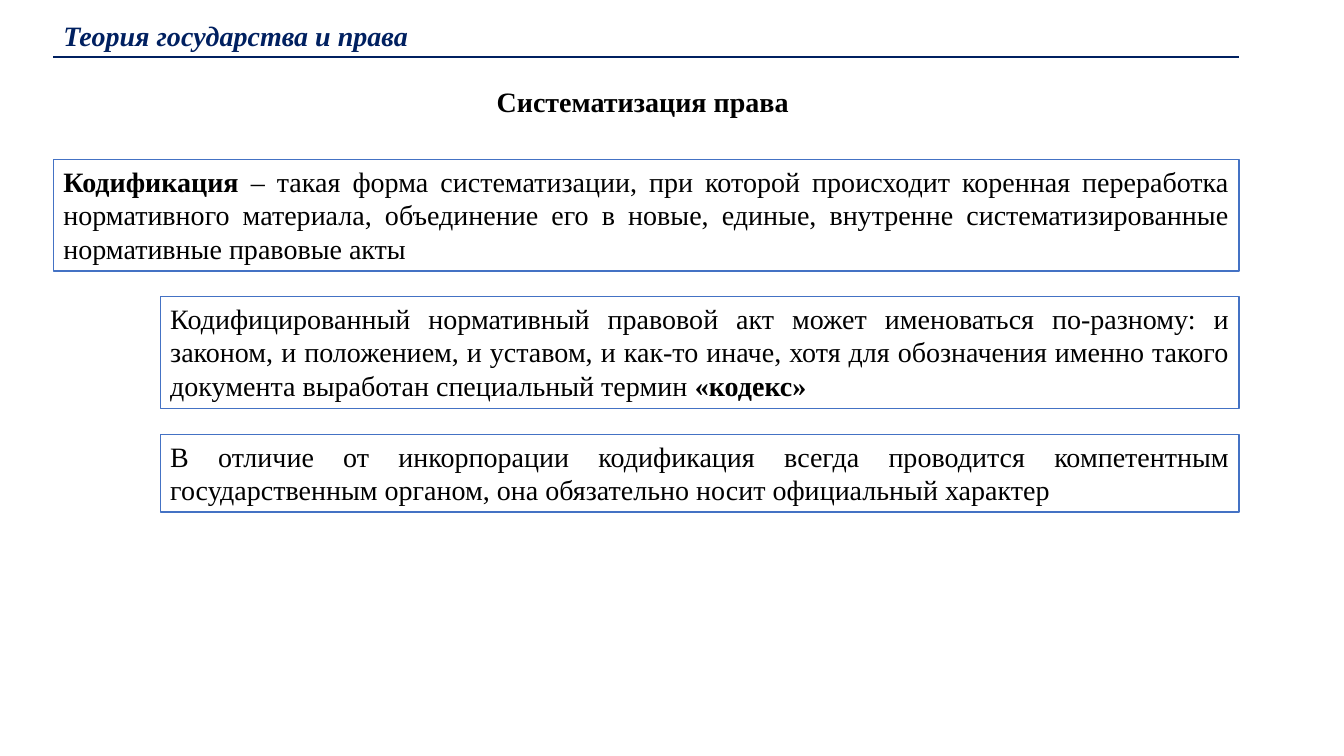
from lxml import etree
from pptx import Presentation
from pptx.dml.color import RGBColor
from pptx.enum import shapes, text
from pptx.oxml.ns import qn
from pptx.util import Inches, Pt

NAVY = RGBColor(0x00, 0x20, 0x60)
BLUE = RGBColor(0x44, 0x72, 0xC4)
BLACK = RGBColor(0, 0, 0)
WHITE = RGBColor(255, 255, 255)
LEFT, INDENT, RIGHT = 0.53, 1.59, 12.29


def write(frame, runs, align, color=BLACK, italic=False, wrap=True):
    layout = {
        "word_wrap": wrap,
        "auto_size": text.MSO_AUTO_SIZE.SHAPE_TO_FIT_TEXT,
        "vertical_anchor": text.MSO_ANCHOR.TOP,
    }
    for name, value in layout.items():
        setattr(frame, name, value)
    paragraph = frame.paragraphs[0]
    paragraph.alignment = align
    for wording, bold in runs:
        run = paragraph.add_run()
        run.text = wording
        style = {"name": "Times New Roman", "size": Pt(20), "bold": bold, "italic": italic}
        for name, value in style.items():
            setattr(run.font, name, value)
        run.font.color.rgb = color


deck = Presentation()
deck.slide_width, deck.slide_height = Inches(13.33), Inches(7.5)
slide = deck.slides.add_slide(deck.slide_layouts[5])

course = slide.shapes.add_textbox(Inches(LEFT), Inches(0.13), Inches(3.71), Inches(0.44))
write(course.text_frame, [("Теория государства и права", True)],
      text.PP_ALIGN.LEFT, NAVY, italic=True, wrap=False)

rule = slide.shapes.add_connector(
    shapes.MSO_CONNECTOR.STRAIGHT, Inches(LEFT), Inches(0.57), Inches(RIGHT), Inches(0.57))
rule.line.color.rgb = NAVY
rule.line.width = Pt(1.5)
etree.SubElement(rule._element.spPr, qn("a:effectLst"))

topic = slide.shapes.title
place = {"left": LEFT, "top": 0.79, "width": RIGHT - LEFT, "height": 0.44}
for name, value in place.items():
    setattr(topic, name, Inches(value))
write(topic.text_frame, [("Систематизация права ", True)], text.PP_ALIGN.CENTER)

statements = [
    (LEFT, 1.58, 1.11, [
        ("Кодификация", True),
        (" – такая форма систематизации, при которой происходит коренная переработка "
         "нормативного материала, объединение его в новые, единые, внутренне "
         "систематизированные нормативные правовые акты", False)]),
    (INDENT, 2.94, 1.11, [
        ("Кодифицированный нормативный правовой акт может именоваться по-разному: "
         "и законом, и положением, и уставом, и как-то иначе, хотя для обозначения "
         "именно такого документа выработан специальный термин ", False),
        ("«кодекс»", True)]),
    (INDENT, 4.31, 0.77, [
        ("В отличие от инкорпорации кодификация всегда проводится компетентным "
         "государственным органом, она обязательно носит официальный характер", False)]),
]
for left, top, height, runs in statements:
    statement = slide.shapes.add_shape(
        shapes.MSO_SHAPE.RECTANGLE,
        Inches(left), Inches(top), Inches(RIGHT - left), Inches(height))
    statement.shadow.inherit = False
    statement.fill.solid()
    statement.fill.fore_color.rgb = WHITE
    statement.line.color.rgb = BLUE
    statement.line.width = Pt(1)
    write(statement.text_frame, runs, text.PP_ALIGN.JUSTIFY)

deck.save("out.pptx")
